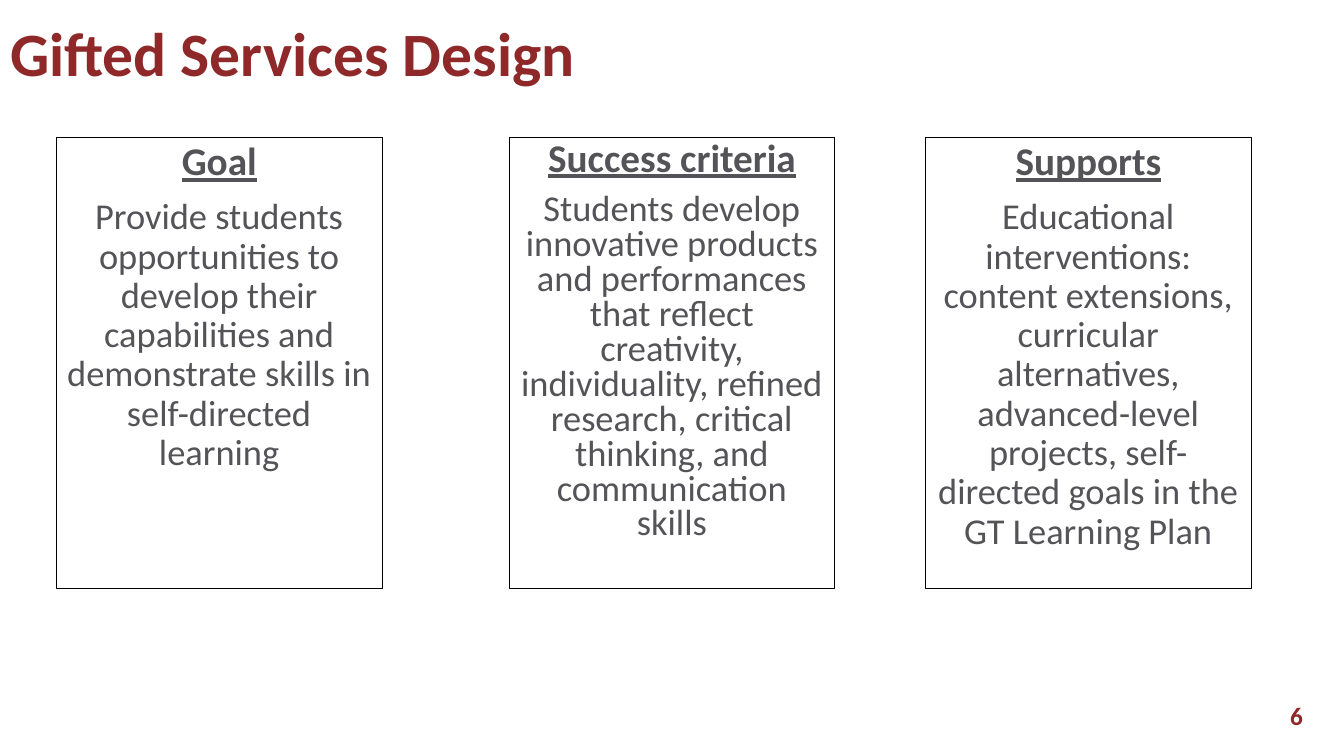
"""Build the Gifted Services Design slide."""
from pptx import Presentation
from pptx.dml.color import RGBColor
from pptx.enum.shapes import MSO_SHAPE
from pptx.enum.text import MSO_ANCHOR, PP_ALIGN
from pptx.util import Inches, Pt

COLORS = {"red": "8F2828", "gray": "545458", "line": "000000"}
TOP, WIDTH, HEIGHT = 1.36, 3.23, 4.48
CARDS = [
    (0.56, 0.9, "Goal",
     "Provide students opportunities to develop their capabilities and "
     "demonstrate skills in self-directed learning"),
    (5.05, 0.8, "Success criteria",
     "Students develop innovative products and performances that reflect "
     "creativity, individuality, refined research, critical thinking, and "
     "communication skills"),
    (9.18, 0.9, "Supports",
     "Educational interventions: content extensions, curricular alternatives, "
     "advanced-level projects, self-directed goals in the GT Learning Plan"),
]


def style(p, size, color, align, bold=False, underline=False):
    p.alignment = align
    p.font.name = "Calibri"
    p.font.size = Pt(size)
    p.font.bold = bold
    p.font.underline = underline
    p.font.color.rgb = RGBColor.from_string(COLORS[color])


prs = Presentation()
prs.slide_width, prs.slide_height = Inches(13.33), Inches(7.5)
s = prs.slides.add_slide(prs.slide_layouts[5])

title = s.shapes.title
title.left, title.top = Inches(0), Inches(0)
title.width, title.height = Inches(11.53), Inches(1.12)
tf = title.text_frame
tf.text = "Gifted Services Design"
tf.vertical_anchor = MSO_ANCHOR.MIDDLE
style(tf.paragraphs[0], 44, "red", PP_ALIGN.LEFT, bold=True)
tf.paragraphs[0].line_spacing = 0.9

for left, spacing, heading, body in CARDS:
    card = s.shapes.add_shape(MSO_SHAPE.RECTANGLE, Inches(left), Inches(TOP),
                              Inches(WIDTH), Inches(HEIGHT))
    card.shadow.inherit = False
    card.fill.background()
    card.line.color.rgb = RGBColor.from_string(COLORS["line"])
    card.line.width = Pt(0.75)
    tf = card.text_frame
    tf.word_wrap = True
    tf.vertical_anchor = MSO_ANCHOR.TOP
    tf.text = heading
    style(tf.paragraphs[0], 28, "gray", PP_ALIGN.CENTER, bold=True, underline=True)
    p = tf.add_paragraph()
    p.text = body
    p.space_before = Pt(10)
    style(p, 26, "gray", PP_ALIGN.CENTER)
    for p in tf.paragraphs:
        p.line_spacing = spacing

number = s.shapes.add_textbox(Inches(10.02), Inches(6.9), Inches(3), Inches(0.4))
tf = number.text_frame
tf.word_wrap = True
tf.text = "6"
style(tf.paragraphs[0], 18, "red", PP_ALIGN.RIGHT, bold=True)

prs.save("out.pptx")
